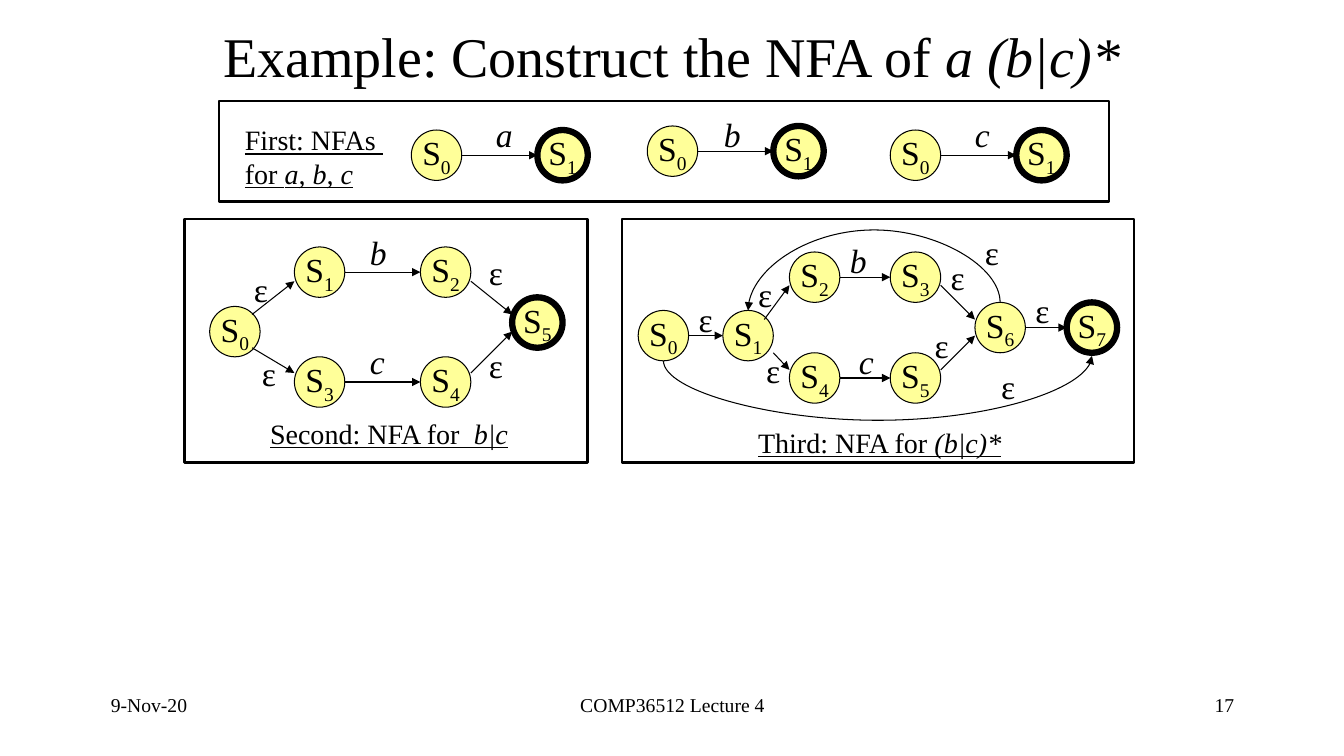
from lxml import etree
from pptx import Presentation
from pptx.dml.color import RGBColor
from pptx.enum.shapes import MSO_CONNECTOR as CONN, MSO_SHAPE as SHAPE
from pptx.enum.text import MSO_ANCHOR as ANCHOR, MSO_AUTO_SIZE as AUTO, PP_ALIGN as ALIGN
from pptx.oxml.ns import qn
from pptx.util import Inches, Pt

FONT = "Times New Roman"
COLORS = {"ink": "000000", "state": "FFFF99"}
SIZE = 0.5
RADIUS = SIZE / 2


def color(name):
    return RGBColor.from_string(COLORS[name])


def write(p, runs, size, align=ALIGN.LEFT, underline=None):
    p.alignment = align
    p.font.name = FONT
    p.font.size = Pt(size)
    p.font.color.rgb = color("ink")
    p.font.underline = underline
    for text, style in runs:
        r = p.add_run()
        r.text = text
        if style == "italic":
            r.font.italic = True
        elif style == "sub":
            r.font._element.set("baseline", "-25000")


def add_text(shapes, box, lines, size, align=ALIGN.LEFT, underline=None, wrap=False):
    sp = shapes.add_textbox(*map(Inches, box))
    tf = sp.text_frame
    tf.word_wrap = wrap
    tf.auto_size = AUTO.NONE if wrap else AUTO.SHAPE_TO_FIT_TEXT
    for i, runs in enumerate(lines):
        p = tf.add_paragraph() if i else tf.paragraphs[0]
        write(p, runs, size, align, underline)


def add_letter(shapes, letter, x, y):
    style = "" if letter == "ε" else "italic"
    add_text(shapes, (x, y, 0.35, 0.5), [[(letter, style)]], 24)


def add_frame(shapes, box):
    sp = shapes.add_shape(SHAPE.RECTANGLE, *map(Inches, box))
    sp.shadow.inherit = False
    sp.fill.background()
    sp.line.color.rgb = color("ink")
    sp.line.width = Pt(1.75)


def add_state(shapes, number, x, y, final):
    sp = shapes.add_shape(SHAPE.OVAL, Inches(x), Inches(y), Inches(SIZE), Inches(SIZE))
    sp.shadow.inherit = False
    sp.fill.solid()
    sp.fill.fore_color.rgb = color("state")
    sp.line.color.rgb = color("ink")
    sp.line.width = Pt(4.5 if final else 0.75)
    tf = sp.text_frame
    tf.word_wrap = False
    tf.vertical_anchor = ANCHOR.MIDDLE
    write(tf.paragraphs[0], [("S", ""), (str(number), "sub")], 24, ALIGN.CENTER)


def add_arrow(shapes, x1, y1, x2, y2, kind=CONN.STRAIGHT):
    cxn = shapes.add_connector(kind, *map(Inches, (x1, y1, x2, y2)))
    cxn.line.color.rgb = color("ink")
    cxn.line.width = Pt(0.75)
    etree.SubElement(cxn.line._get_or_add_ln(), qn("a:tailEnd"), type="triangle")
    etree.SubElement(cxn._element.spPr, qn("a:effectLst"))
    return cxn


def add_loop(shapes, x1, y1, x2, y2, bulge, angle):
    cx, cy = (x1 + x2) / 2, (y1 + y2) / 2
    half_w, half_h = abs(y2 - y1) / 2, abs(x2 - x1) / 2
    cxn = add_arrow(shapes, cx + half_w, cy + half_h, cx - half_w, cy - half_h, CONN.CURVE)
    spPr = cxn._element.spPr
    spPr.find(qn("a:xfrm")).set("rot", str(angle * 60000))
    geom = spPr.find(qn("a:prstGeom"))
    guides = geom.find(qn("a:avLst"))
    if guides is None:
        guides = etree.SubElement(geom, qn("a:avLst"))
    adjust = round(-bulge / (2 * half_w) * 100000)
    etree.SubElement(guides, qn("a:gd"), name="adj1", fmla=f"val {adjust}")


def add_nfa(slide, states, level, slanted, letters):
    shapes = slide.shapes.add_group_shape().shapes
    for number, (x, y) in states.items():
        add_state(shapes, number, x, y, number == max(states))
    for start, end in level:
        x, y = states[start]
        add_arrow(shapes, x + SIZE, y + RADIUS, states[end][0], y + RADIUS)
    for ends in slanted:
        add_arrow(shapes, *ends)
    for letter, x, y in letters:
        add_letter(shapes, letter, x, y)
    return shapes


def add_first(slide):
    for letter, x, y, letter_x in (("a", 4.08, 1.29, 4.82), ("c", 8.83, 1.29, 9.57),
                                   ("b", 6.42, 1.25, 7.08)):
        add_nfa(slide, {0: (x, y), 1: (x + 1.25, y)}, [(0, 1)], [],
                [(letter, letter_x, 1.08)])
    add_text(slide.shapes, (2.33, 1.17, 1.59, 0.77),
             [[("First: NFAs ", "")], [("for ", ""), ("a, b, c", "italic")]],
             20, underline=True)
    add_frame(slide.shapes, (2.17, 1, 8.83, 1))


def add_second(slide):
    states = {0: (2.08, 3.04), 1: (2.92, 2.45), 2: (4.17, 2.45),
              3: (2.92, 3.54), 4: (4.17, 3.54), 5: (5.08, 2.95)}
    slanted = [(2.5, 3.12, 2.92, 2.79), (2.5, 3.45, 2.92, 3.7),
               (4.67, 2.79, 5.08, 3.12), (4.67, 3.7, 5.08, 3.29)]
    letters = [("b", 3.57, 2.25), ("c", 3.57, 3.33), ("ε", 2.42, 2.62),
               ("ε", 4.75, 3.37), ("ε", 4.75, 2.45), ("ε", 2.5, 3.45)]
    add_nfa(slide, states, [(1, 2), (3, 4)], slanted, letters)
    add_text(slide.shapes, (2.58, 4.08, 2.59, 0.43),
             [[("Second: NFA for  ", ""), ("b|c", "italic")]], 20, underline=True)
    add_frame(slide.shapes, (1.83, 2.17, 4, 2.42))


def add_third(slide):
    states = {0: (6.33, 3.08), 1: (7.17, 3.08), 2: (7.83, 2.5), 3: (8.83, 2.5),
              4: (7.83, 3.5), 5: (8.83, 3.5), 6: (9.67, 3), 7: (10.58, 3)}
    slanted = [(7.58, 3.17, 7.83, 2.83), (7.67, 3.5, 7.83, 3.67),
               (9.33, 2.83, 9.67, 3.17), (9.33, 3.67, 9.67, 3.33)]
    letters = [("b", 8.33, 2.33), ("c", 8.42, 3.33), ("ε", 9.67, 2.25), ("ε", 9.83, 3.58),
               ("ε", 10.17, 2.83), ("ε", 6.83, 2.92), ("ε", 7.5, 3.42), ("ε", 7.42, 2.67),
               ("ε", 9.33, 2.5), ("ε", 9.17, 3.17)]
    shapes = add_nfa(slide, states, [(0, 1), (2, 3), (4, 5), (6, 7)], slanted, letters)
    add_loop(shapes, 9.92, 3, 7.42, 3.08, 0.72, 270)
    add_loop(shapes, 6.58, 3.58, 10.83, 3.53, 0.59, 90)
    add_text(shapes, (7.42, 4.17, 2.64, 0.43),
             [[("Third: NFA for ", ""), ("(b|c)*", "italic")]], 20, underline=True)
    add_frame(slide.shapes, (6.17, 2.17, 5.08, 2.42))


def add_title(slide):
    sp = slide.shapes.title
    sp.left, sp.top, sp.width, sp.height = map(Inches, (2, 0.17, 9.33, 0.75))
    tf = sp.text_frame
    tf.vertical_anchor = ANCHOR.MIDDLE
    write(tf.paragraphs[0], [("Example: Construct the NFA of ", ""), ("a (b|c)*", "italic")],
          40, ALIGN.CENTER)


def add_footer(slide):
    for text, x, width, align in (("9-Nov-20", 1, 2.78, ALIGN.LEFT),
                                  ("COMP36512 Lecture 4", 4.56, 4.22, ALIGN.CENTER),
                                  ("17", 9.56, 2.78, ALIGN.RIGHT)):
        add_text(slide.shapes, (x, 6.83, width, 0.5), [[(text, "")]], 14, align, wrap=True)


def main():
    prs = Presentation()
    prs.slide_width, prs.slide_height = Inches(13.33), Inches(7.5)
    slide = prs.slides.add_slide(prs.slide_layouts[5])
    add_title(slide)
    add_first(slide)
    add_second(slide)
    add_third(slide)
    add_footer(slide)
    prs.save("out.pptx")


if __name__ == "__main__":
    main()
